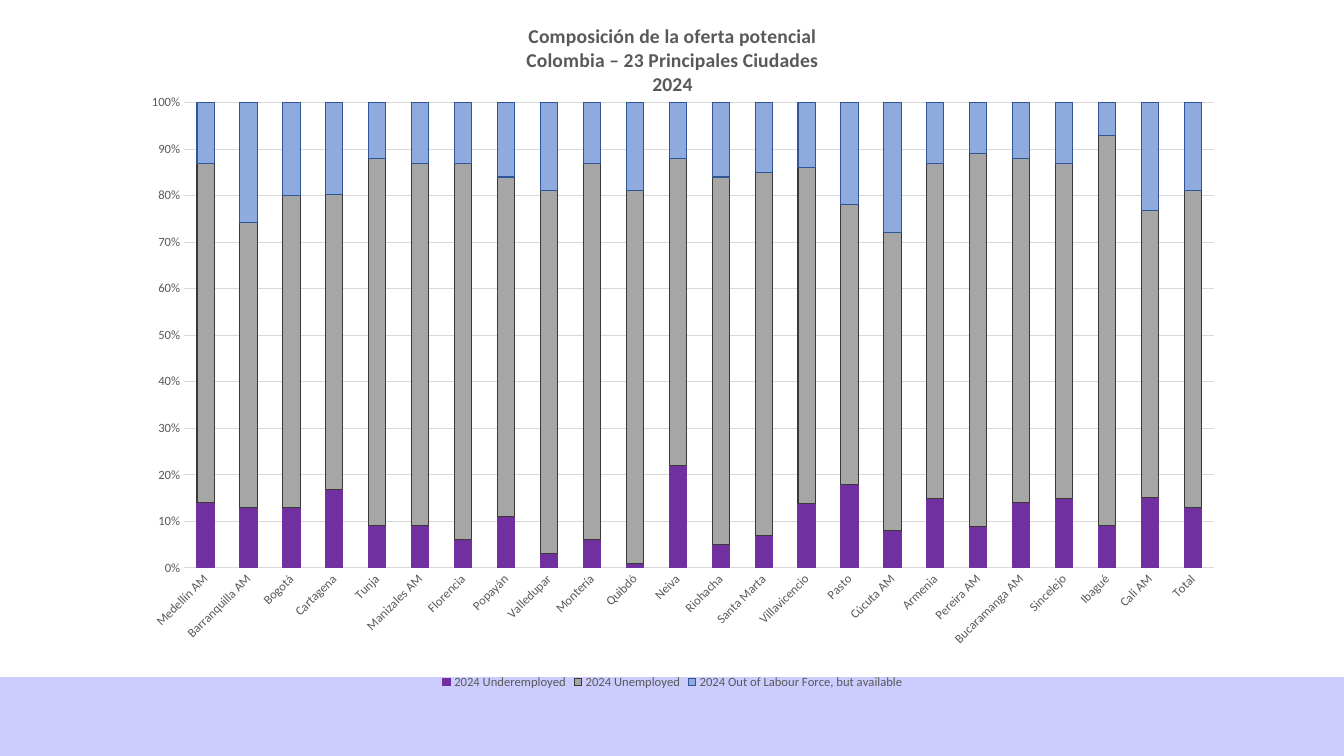
"""Build the slide on the composition of potential labour supply in 23 Colombian cities."""
from lxml.etree import SubElement
from pptx import Presentation
from pptx.chart.data import CategoryChartData
from pptx.dml.color import RGBColor
from pptx.enum.chart import XL_CHART_TYPE as ChartType, XL_LEGEND_POSITION as LegendPosition
from pptx.enum.chart import XL_TICK_MARK as TickMark
from pptx.enum.shapes import MSO_SHAPE as Shape
from pptx.oxml import parse_xml
from pptx.oxml.ns import nsdecls, qn
from pptx.util import Inches, Pt

TITLE = ["Composición de la oferta potencial", "Colombia – 23 Principales Ciudades", "2024"]
SERIES = ["2024 Underemployed", "2024 Unemployed", "2024 Out of Labour Force, but available"]
CITIES = [
    ("Medellín AM", 14, 72, 13),
    ("Barranquilla AM", 13, 62, 26),
    ("Bogotá", 13, 67, 20),
    ("Cartagena", 17, 64, 20),
    ("Tunja", 9, 79, 12),
    ("Manizales AM", 9, 78, 13),
    ("Florencia", 6, 80, 13),
    ("Popayán", 11, 73, 16),
    ("Valledupar", 3, 78, 19),
    ("Montería", 6, 81, 13),
    ("Quibdó", 1, 80, 19),
    ("Neiva", 22, 66, 12),
    ("Riohacha", 5, 79, 16),
    ("Santa Marta", 7, 78, 15),
    ("Villavicencio", 14, 73, 14),
    ("Pasto", 18, 60, 22),
    ("Cúcuta AM", 8, 64, 28),
    ("Armenia", 15, 72, 13),
    ("Pereira AM", 9, 81, 11),
    ("Bucaramanga AM", 14, 74, 12),
    ("Sincelejo", 15, 72, 13),
    ("Ibagué", 9, 84, 7),
    ("Cali AM", 15, 61, 23),
    ("Total", 13, 68, 19),
]
THEME = {
    "font": "Calibri",
    "text": "595959",
    "grid": "D9D9D9",
    "band": "CCCCFF",
    "bars": [("7030A0", "7030A0"), ("A6A6A6", "3B3838"), ("8FAADC", "2F5597")],
    "title_size": 14,
    "label_size": 9,
    "hairline": 0.75,
}
SLIDE_WIDTH, SLIDE_HEIGHT = 13.33, 7.5
BAND_HEIGHT = 0.78
CHART_AREA = (1.24, 0, 10.86, 6.88)
PLOT_AREA = {"x": 0.054, "y": 0.148, "w": 0.941, "h": 0.671}
LABEL_ANGLE = -45


def style_font(font, size, bold=False):
    """Apply the theme's typeface and text colour."""
    font.name = THEME["font"]
    font.size = Pt(size)
    font.bold = bold
    font.color.rgb = RGBColor.from_string(THEME["text"])


def style_line(line, color, width=THEME["hairline"]):
    """Give a line a solid colour and a width in points."""
    line.color.rgb = RGBColor.from_string(color)
    line.width = Pt(width)


def add_band(slide):
    """Draw the coloured band along the foot of the slide."""
    band = slide.shapes.add_shape(
        Shape.RECTANGLE, 0, Inches(SLIDE_HEIGHT - BAND_HEIGHT), Inches(SLIDE_WIDTH), Inches(BAND_HEIGHT))
    band.shadow.inherit = False
    band.fill.solid()
    band.fill.fore_color.rgb = RGBColor.from_string(THEME["band"])
    style_line(band.line, THEME["band"], 1)


def add_title(chart):
    """Write the chart title, one paragraph per line."""
    frame = chart.chart_title.text_frame
    for index, line in enumerate(TITLE):
        paragraph = frame.add_paragraph() if index else frame.paragraphs[0]
        run = paragraph.add_run()
        run.text = line
        style_font(run.font, THEME["title_size"], bold=True)
    chart.chart_title.include_in_layout = False


def style_axes(chart):
    """Format both axes and the horizontal gridlines."""
    cities, share = chart.category_axis, chart.value_axis
    for axis in (cities, share):
        axis.major_tick_mark = axis.minor_tick_mark = TickMark.NONE
        style_font(axis.tick_labels.font, THEME["label_size"])
    style_line(cities.format.line, THEME["grid"])
    body = cities._element.find(qn("c:txPr")).find(qn("a:bodyPr"))
    body.set("rot", str(LABEL_ANGLE * 60000))
    body.set("vert", "horz")
    share.format.line.fill.background()
    share.has_major_gridlines = True
    style_line(share.major_gridlines.format.line, THEME["grid"])
    share.minimum_scale, share.maximum_scale, share.major_unit = 0, 1, 0.1
    share.tick_labels.number_format = "0%"
    share.tick_labels.number_format_is_linked = False


def place_plot(chart):
    """Fix the inner plot area as fractions of the chart."""
    plot_area = chart._chartSpace.chart.plotArea
    for stale in plot_area.findall(qn("c:layout")):
        plot_area.remove(stale)
    layout = parse_xml(f"<c:layout {nsdecls('c')}><c:manualLayout/></c:layout>")
    settings = {"layoutTarget": "inner", "xMode": "edge", "yMode": "edge", **PLOT_AREA}
    for tag, value in settings.items():
        SubElement(layout[0], qn(f"c:{tag}")).set("val", str(value))
    plot_area.insert(0, layout)


def add_supply_chart(slide):
    """Add the stacked chart of the three groups in every city."""
    names, *groups = zip(*CITIES)
    supply = CategoryChartData()
    supply.categories = names
    for name, values in zip(SERIES, groups):
        supply.add_series(name, values)
    chart = slide.shapes.add_chart(
        ChartType.COLUMN_STACKED_100, *map(Inches, CHART_AREA), supply).chart
    style_font(chart.font, THEME["label_size"])
    add_title(chart)
    style_axes(chart)
    place_plot(chart)
    plot = chart.plots[0]
    plot.gap_width, plot.overlap = 150, 100
    plot.vary_by_categories = False
    for group, (fill, outline) in zip(plot.series, THEME["bars"]):
        group.format.fill.solid()
        group.format.fill.fore_color.rgb = RGBColor.from_string(fill)
        style_line(group.format.line, outline)
    chart.has_legend = True
    chart.legend.position = LegendPosition.BOTTOM
    chart.legend.include_in_layout = False
    style_font(chart.legend.font, THEME["label_size"])


def main():
    """Assemble and save the slide."""
    deck = Presentation()
    deck.slide_width, deck.slide_height = Inches(SLIDE_WIDTH), Inches(SLIDE_HEIGHT)
    slide = deck.slides.add_slide(deck.slide_layouts[6])
    add_band(slide)
    add_supply_chart(slide)
    deck.save("out.pptx")


if __name__ == "__main__":
    main()
